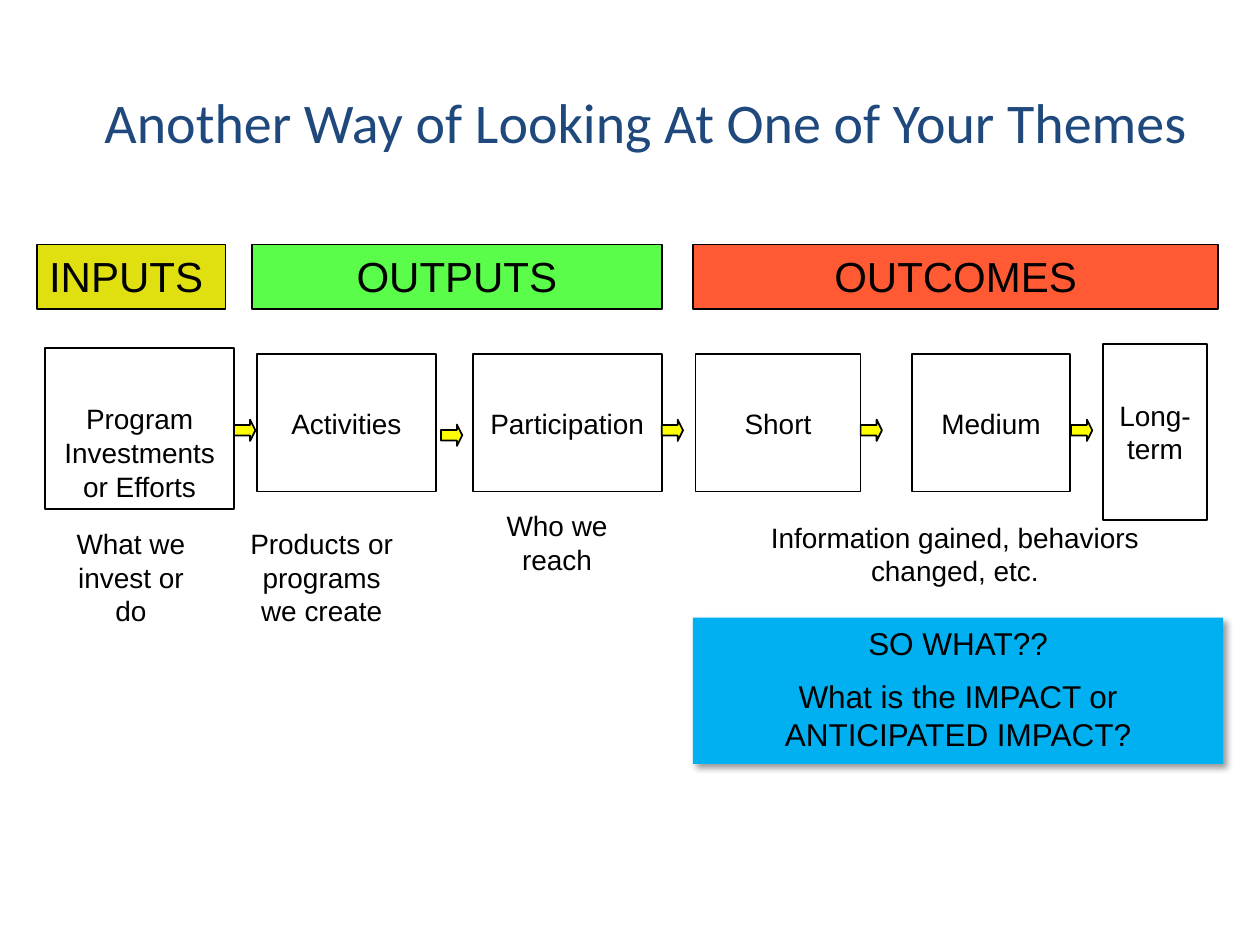
from lxml import etree
from pptx import Presentation
from pptx.dml.color import RGBColor
from pptx.enum.shapes import MSO_SHAPE as SHAPE
from pptx.enum.text import MSO_ANCHOR as ANCHOR, PP_ALIGN as ALIGN
from pptx.oxml import parse_xml
from pptx.oxml.ns import nsdecls, qn
from pptx.util import Cm, Pt


def paint(part, fill=None, line=None):
    """Set fill and outline from hex strings; None leaves them empty."""
    part.shadow.inherit = False
    if fill:
        part.fill.solid()
        part.fill.fore_color.rgb = RGBColor.from_string(fill)
    else:
        part.fill.background()
    if line:
        part.line.color.rgb = RGBColor.from_string(line)
        part.line.width = Pt(1)
    else:
        part.line.fill.background()


def write(part, text, size=16, font="Arial", color="000000",
          align=ALIGN.CENTER, anchor=ANCHOR.TOP, gap=0):
    """Fill a shape with text, one paragraph per line."""
    frame = part.text_frame
    frame.word_wrap = True
    frame.vertical_anchor = anchor
    frame.text = text
    for number, paragraph in enumerate(frame.paragraphs):
        paragraph.alignment = align
        if number:
            paragraph.space_before = Pt(gap)
        paragraph.font.size = Pt(size)
        paragraph.font.name = font
        paragraph.font.color.rgb = RGBColor.from_string(color)


deck = Presentation()
deck.slide_width, deck.slide_height = Cm(25.4), Cm(19.05)
shapes = deck.slides.add_slide(deck.slide_layouts[6]).shapes

# Title
title = shapes.add_textbox(Cm(0.64), Cm(1.07), Cm(24.77), Cm(2.74))
write(title, "Another Way of Looking At One of Your Themes", size=32,
      font="Calibri", color="1F497D", anchor=ANCHOR.MIDDLE)

# Stage headers
for name, left, width, fill, align in [
    ("INPUTS", 0.74, 3.81, "E0E010", ALIGN.LEFT),
    ("OUTPUTS", 5.08, 8.26, "5AFD49", ALIGN.CENTER),
    ("OUTCOMES", 13.97, 10.59, "FF5A33", ALIGN.CENTER),
]:
    stage = shapes.add_shape(SHAPE.RECTANGLE, Cm(left), Cm(4.93), Cm(width), Cm(1.3))
    paint(stage, fill, "000000")
    write(stage, name, size=24, align=align)

# Steps of the model
for name, left, top, width, height, anchor in [
    ("Program Investments or Efforts", 0.91, 7.01, 3.81, 3.25, ANCHOR.BOTTOM),
    ("Activities", 5.18, 7.14, 3.61, 2.77, ANCHOR.MIDDLE),
    ("Participation", 9.53, 7.14, 3.81, 2.77, ANCHOR.MIDDLE),
    ("Short", 14.02, 7.14, 3.33, 2.77, ANCHOR.MIDDLE),
    ("Medium", 18.39, 7.14, 3.18, 2.77, ANCHOR.MIDDLE),
    ("Long-term", 22.23, 6.93, 2.11, 3.56, ANCHOR.MIDDLE),
]:
    step = shapes.add_shape(SHAPE.RECTANGLE, Cm(left), Cm(top), Cm(width), Cm(height))
    paint(step, line="000000")
    write(step, name, anchor=anchor)

# Arrows between the steps
for left, top in [(4.72, 8.46), (8.89, 8.56), (13.34, 8.46), (17.35, 8.46), (21.59, 8.46)]:
    arrow = shapes.add_shape(SHAPE.RIGHT_ARROW, Cm(left), Cm(top), Cm(0.43), Cm(0.43))
    arrow.adjustments[0], arrow.adjustments[1] = 0.5, 0.25
    paint(arrow, "FFFF00", "000000")

# Explanations below the steps
for text, left, top, width, height in [
    ("What we invest or do", 1.27, 10.49, 2.74, 2.31),
    ("Products or programs we create", 4.72, 10.49, 3.53, 2.31),
    ("Who we reach", 9.53, 10.13, 3.4, 1.63),
    ("Information gained, behaviors changed, etc.", 14.17, 10.36, 10.16, 1.63),
]:
    explanation = shapes.add_textbox(Cm(left), Cm(top), Cm(width), Cm(height))
    write(explanation, text)

# Impact panel with a soft shadow
impact = shapes.add_shape(SHAPE.RECTANGLE, Cm(13.97), Cm(12.45), Cm(10.69), Cm(2.95))
paint(impact, "00B0F0")
write(impact, "SO WHAT??\nWhat is the IMPACT or ANTICIPATED IMPACT?", size=18, gap=9)
effects = impact._element.spPr.find(qn("a:effectLst"))
shadow = etree.SubElement(effects, qn("a:outerShdw"), blurRad=str(Pt(4)),
                          dist=str(Pt(3)), dir="2700000", algn="tl", rotWithShape="0")
shadow.append(parse_xml(
    f'<a:srgbClr {nsdecls("a")} val="000000"><a:alpha val="40000"/></a:srgbClr>'))

deck.save("out.pptx")
